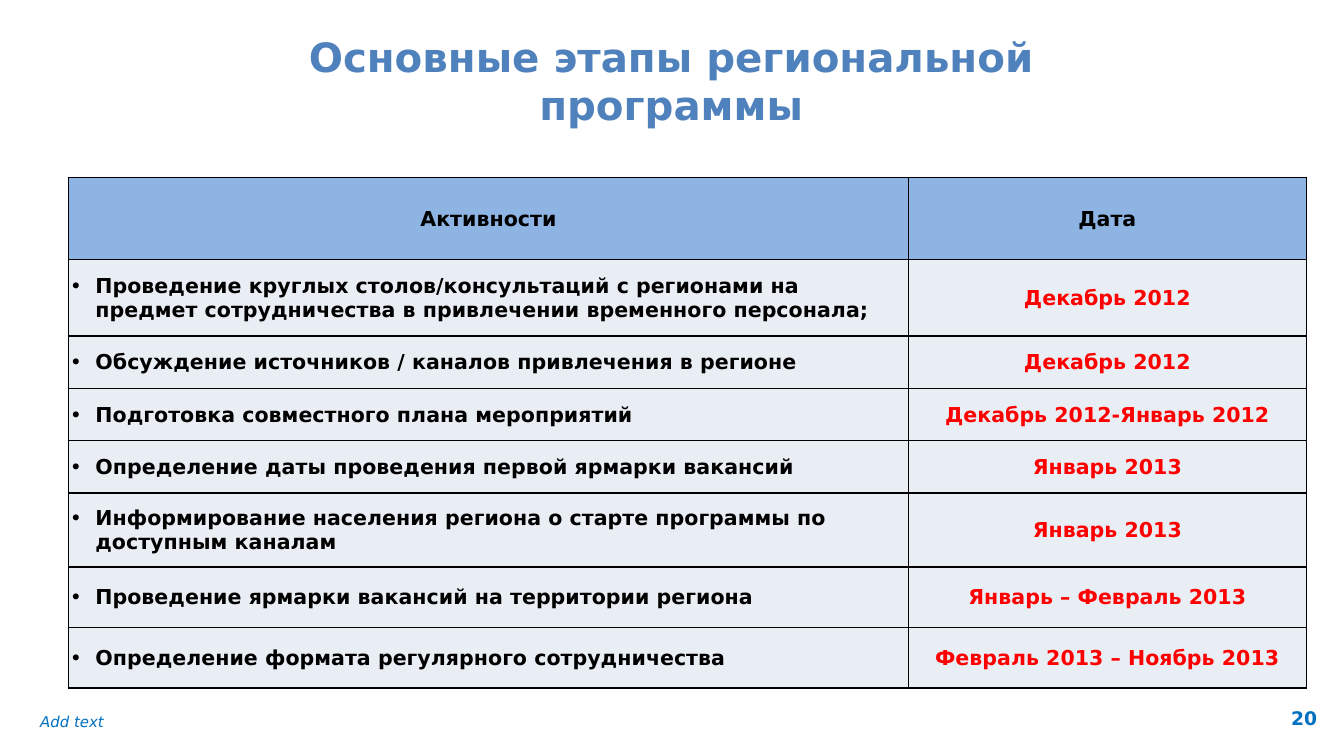
"""Build the slide with the stages of the regional programme."""
from lxml.etree import SubElement
from pptx import Presentation
from pptx.dml.color import RGBColor
from pptx.enum.text import MSO_ANCHOR as Anchor, PP_ALIGN as Align
from pptx.oxml.ns import qn
from pptx.util import Inches, Pt

FONT = "DejaVu Sans"
BLACK, RED, BLUE = "000000", "FF0000", "0070C0"
HEADER_FILL, BODY_FILL = "8EB4E3", "E9EDF4"
PAGE_WIDTH = Inches(10)
PAGE_HEIGHT = PAGE_WIDTH * 9 // 16

TEXTS = [
    dict(text="Add text", place=(0.2, 5.25, 8.66, 0.24), inset=(0.1, 0.05),
         anchor=Anchor.TOP, align=Align.LEFT, color=BLUE,
         style=dict(size=Pt(8), italic=True)),
    dict(text="20", place=(9.04, 5.29, 0.76, 0.14), inset=(0, 0),
         anchor=Anchor.BOTTOM, align=Align.RIGHT, color=BLUE,
         style=dict(size=Pt(10), bold=True)),
    dict(text="Основные этапы региональной программы",
         place=(1.53, 0.2, 6.93, 0.8), inset=(0.1, 0.05),
         anchor=Anchor.MIDDLE, align=Align.CENTER, color="4F81BD",
         style=dict(size=Pt(21.6), bold=True)),
]
STAGES = [
    ("Активности", "Дата", 0.61),
    ("Проведение круглых столов/консультаций с регионами на предмет "
     "сотрудничества в привлечении временного персонала;", "Декабрь 2012", 0.57),
    ("Обсуждение источников / каналов привлечения в регионе", "Декабрь 2012", 0.39),
    ("Подготовка совместного плана мероприятий", "Декабрь 2012-Январь 2012", 0.39),
    ("Определение даты проведения первой ярмарки вакансий", "Январь 2013", 0.39),
    ("Информирование населения региона о старте программы по доступным каналам",
     "Январь 2013", 0.55),
    ("Проведение ярмарки вакансий на территории региона", "Январь – Февраль 2013", 0.45),
    ("Определение формата регулярного сотрудничества", "Февраль 2013 – Ноябрь 2013", 0.45),
]
COLUMNS = (6.25, 2.96)
TABLE_LEFT, TABLE_TOP = 0.51, 1.32


def apply(target, values):
    for name, value in values.items():
        setattr(target, name, value)


def paint(color_format, color):
    color_format.rgb = RGBColor.from_string(color)


def write(para, text, align, color, style):
    para.alignment = align
    span = para.add_run()
    span.text = text
    apply(span.font, dict(name=FONT, **style))
    paint(span.font.color, color)


def add_text(page, text, place, inset, anchor, align, color, style):
    frame = page.shapes.add_textbox(*map(Inches, place)).text_frame
    across, down = map(Inches, inset)
    apply(frame, dict(word_wrap=True, vertical_anchor=anchor,
                      margin_left=across, margin_right=across,
                      margin_top=down, margin_bottom=down))
    write(frame.paragraphs[0], text, align, color, style)


def add_bullet(para):
    properties = para._p.get_or_add_pPr()
    indent = Inches(0.19)
    properties.set("marL", str(indent))
    properties.set("indent", str(-indent))
    SubElement(properties, qn("a:buFont")).set("typeface", FONT)
    SubElement(properties, qn("a:buChar")).set("char", "•")


def add_borders(cell):
    properties = cell._tc.get_or_add_tcPr()
    for side in ("lnL", "lnR", "lnT", "lnB"):
        line = SubElement(properties, qn(f"a:{side}"), w=str(Pt(1)))
        fill = SubElement(line, qn("a:solidFill"))
        SubElement(fill, qn("a:srgbClr")).set("val", BLACK)


def fill_cell(cell, text, is_header, is_date):
    apply(cell, dict(vertical_anchor=Anchor.MIDDLE, margin_left=Inches(0.01),
                     margin_right=Inches(0.01), margin_top=Inches(0.01),
                     margin_bottom=0))
    add_borders(cell)
    cell.fill.solid()
    paint(cell.fill.fore_color, HEADER_FILL if is_header else BODY_FILL)
    para = cell.text_frame.paragraphs[0]
    centred = is_header or is_date
    if not centred:
        add_bullet(para)
    write(para, text, Align.CENTER if centred else Align.LEFT,
          RED if is_date and not is_header else BLACK,
          dict(size=Pt(11), bold=True))


def add_stages(page):
    heights = [height for _, _, height in STAGES]
    table = page.shapes.add_table(
        len(STAGES), len(COLUMNS), Inches(TABLE_LEFT), Inches(TABLE_TOP),
        Inches(sum(COLUMNS)), Inches(sum(heights))).table
    for column, width in zip(table.columns, COLUMNS):
        column.width = Inches(width)
    for number, (activity, date, height) in enumerate(STAGES):
        table.rows[number].height = Inches(height)
        for position, text in enumerate((activity, date)):
            fill_cell(table.cell(number, position), text, number == 0, position == 1)


def main():
    deck = Presentation()
    apply(deck, dict(slide_width=PAGE_WIDTH, slide_height=PAGE_HEIGHT))
    page = deck.slides.add_slide(deck.slide_layouts[6])
    for item in TEXTS:
        add_text(page, **item)
    add_stages(page)
    deck.save("out.pptx")


if __name__ == "__main__":
    main()
